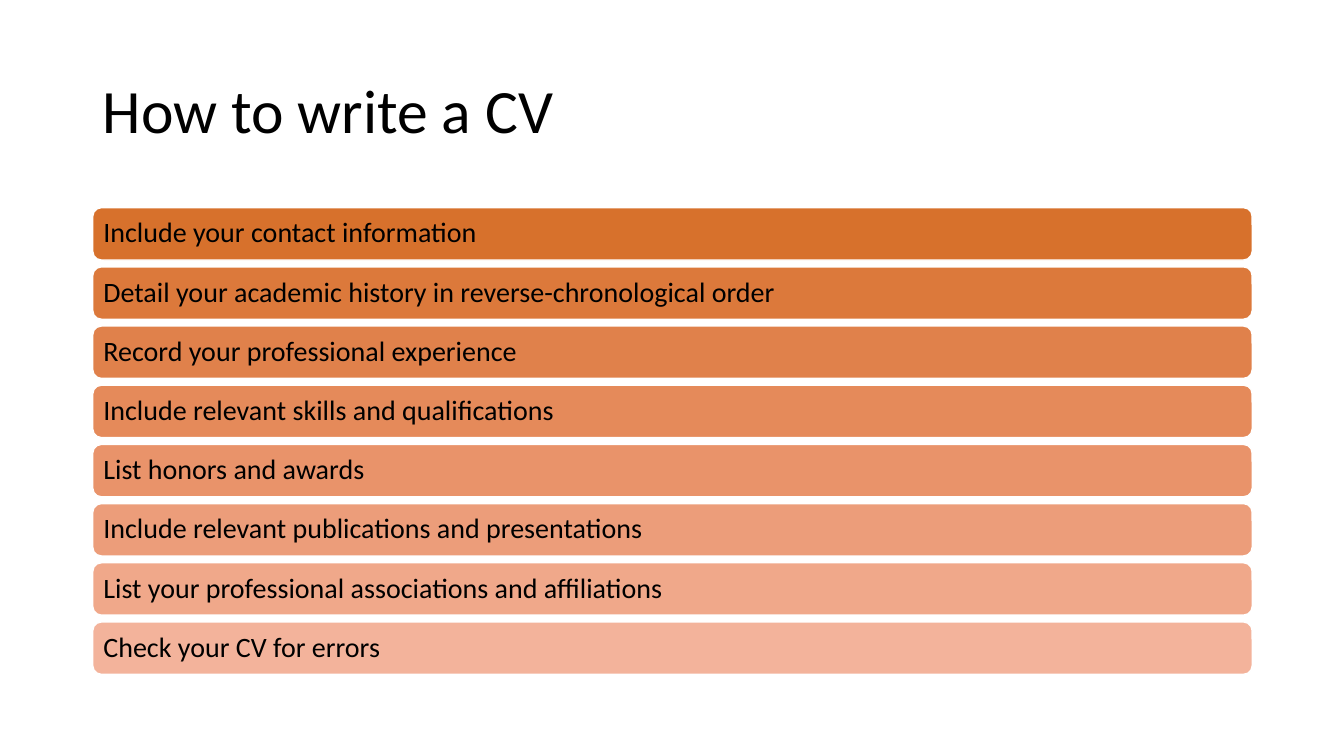
from pptx import Presentation
from pptx.dml.color import RGBColor
from pptx.enum.shapes import MSO_SHAPE as Shape
from pptx.enum.text import MSO_ANCHOR as Anchor, PP_ALIGN as Align
from pptx.util import Inches, Pt

BLACK = RGBColor(0x00, 0x00, 0x00)
WHITE = RGBColor(0xFF, 0xFF, 0xFF)
FONT = "Calibri"
STEPS = [
    ("Include your contact information", RGBColor(0xD7, 0x71, 0x2C)),
    ("Detail your academic history in reverse-chronological order",
     RGBColor(0xDC, 0x79, 0x3B)),
    ("Record your professional experience", RGBColor(0xE0, 0x81, 0x4B)),
    ("Include relevant skills and qualifications", RGBColor(0xE5, 0x8A, 0x5A)),
    ("List honors and awards", RGBColor(0xE9, 0x93, 0x6A)),
    ("Include relevant publications and presentations",
     RGBColor(0xEC, 0x9D, 0x7A)),
    ("List your professional associations and affiliations",
     RGBColor(0xF0, 0xA8, 0x8A)),
    ("Check your CV for errors", RGBColor(0xF3, 0xB3, 0x9B)),
]


def set_text(shape, text, size):
    frame = shape.text_frame
    frame.text = text
    frame.word_wrap = True
    frame.vertical_anchor = Anchor.MIDDLE
    para = frame.paragraphs[0]
    para.alignment = Align.LEFT
    para.line_spacing = 0.9
    font = para.runs[0].font
    font.name = FONT
    font.size = Pt(size)
    font.color.rgb = BLACK


def add_title(slide, text, left, top, width, height):
    title = slide.shapes.title
    title.left, title.top = Inches(left), Inches(top)
    title.width, title.height = Inches(width), Inches(height)
    set_text(title, text, 44)


def add_steps(slide, steps, left, top, width, height):
    """Stack one bar per step so that they fill the box evenly."""
    bar_h = 0.52
    pitch = (height - bar_h) / (len(steps) - 1)
    for row, (text, color) in enumerate(steps):
        bar = slide.shapes.add_shape(
            Shape.ROUNDED_RECTANGLE, Inches(left), Inches(top + row * pitch),
            Inches(width), Inches(bar_h))
        bar.shadow.inherit = False
        bar.fill.solid()
        bar.fill.fore_color.rgb = color
        bar.line.color.rgb = WHITE
        bar.line.width = Pt(1)
        frame = bar.text_frame
        frame.margin_left = frame.margin_right = Inches(0.08)
        frame.margin_top = frame.margin_bottom = Inches(0.08)
        set_text(bar, text, 20)


def main():
    deck = Presentation()
    deck.slide_width, deck.slide_height = Inches(13.33), Inches(7.5)
    slide = deck.slides.add_slide(deck.slide_layouts.get_by_name("Title Only"))
    add_title(slide, "How to write a CV", 0.92, 0.4, 11.5, 1.45)
    add_steps(slide, STEPS, 0.92, 2.06, 11.5, 4.63)
    deck.save("out.pptx")


if __name__ == "__main__":
    main()
